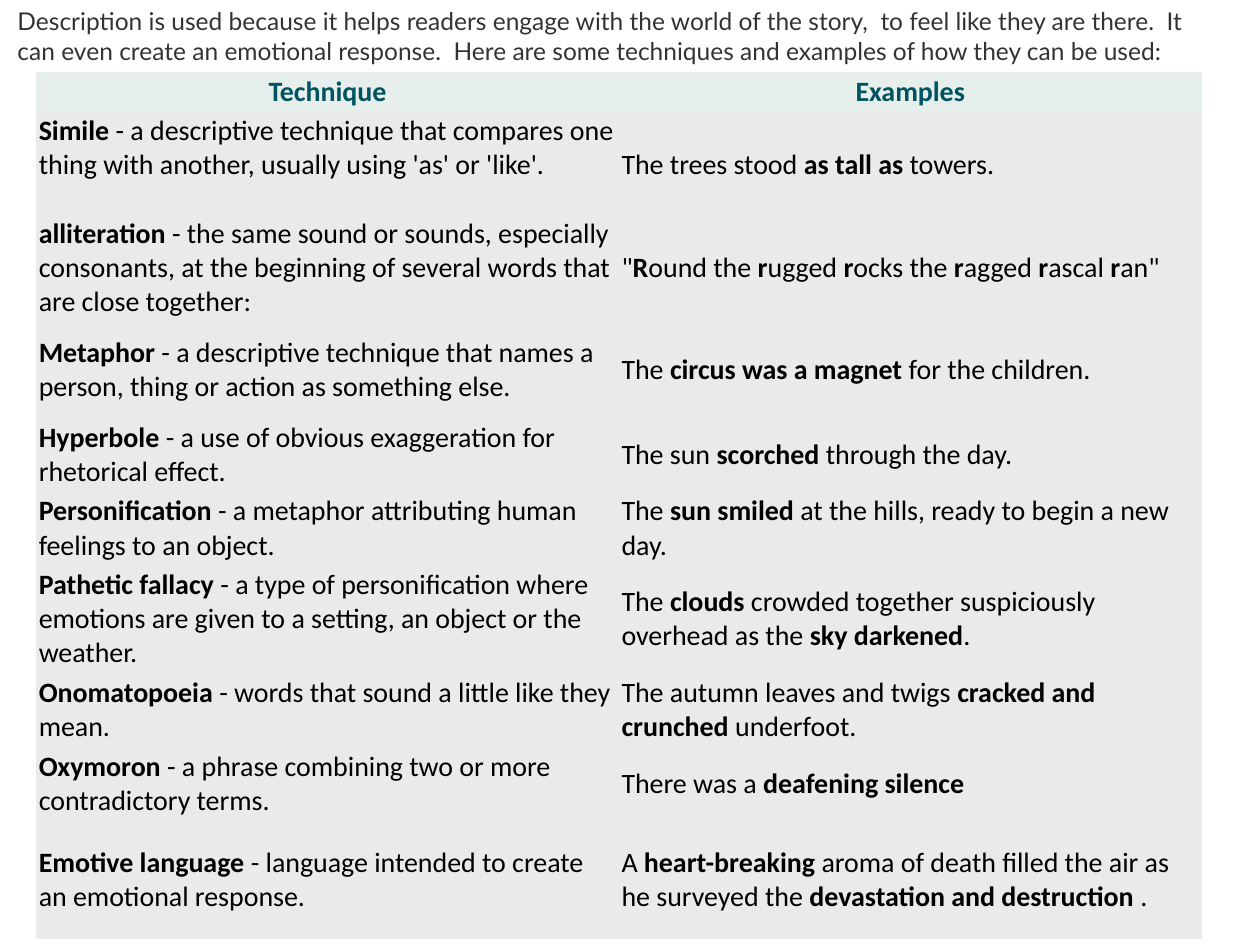
from pptx import Presentation
from pptx.dml.color import RGBColor
from pptx.enum.text import MSO_ANCHOR as Anchor, PP_ALIGN as Align
from pptx.util import Pt

COLORS = {"heading": "005361", "header": "E6EFEC", "body": "EAEAEA",
          "text": "000000", "intro": "333333"}
NO_STYLE_NO_GRID = "{2D5ABB26-0587-4C30-8999-92F81FD0307C}"

INTRO = ("Description is used because it helps readers engage with the world of the story,  "
         "to feel like they are there.  It can even create an emotional response.  "
         "Here are some techniques and examples of how they can be used:")

# Bold passages stand between asterisks; a line break starts a new paragraph.
ROWS = [
    ("*Technique*", "*Examples*"),
    ("*Simile* - a descriptive technique that compares one thing with another, "
     "usually using 'as' or 'like'.\n"
     "*alliteration* - the same sound or sounds, especially consonants, "
     "at the beginning of several words that are close together:",
     "The trees stood *as tall as* towers.\n"
     "\"*R*ound the *r*ugged *r*ocks the *r*agged *r*ascal *r*an\""),
    ("*Metaphor* - a descriptive technique that names a person, thing or action as something else.",
     "The *circus was a magnet* for the children."),
    ("*Hyperbole* - a use of obvious exaggeration for rhetorical effect.",
     "The sun *scorched* through the day."),
    ("*Personification* - a metaphor attributing human feelings to an object.",
     "The *sun smiled* at the hills, ready to begin a new day."),
    ("*Pathetic fallacy* - a type of personification where emotions are given to a setting, "
     "an object or the weather.",
     "The *clouds* crowded together suspiciously overhead as the *sky darkened*."),
    ("*Onomatopoeia* - words that sound a little like they mean.",
     "The autumn leaves and twigs *cracked and crunched *underfoot."),
    ("*Oxymoron* - a phrase combining two or more contradictory terms.",
     "There was a *deafening silence*"),
    ("*Emotive language* - language intended to create an emotional response.",
     "A *heart-breaking* aroma of death filled the air as he surveyed the "
     "*devastation and destruction* ."),
]
ROW_HEIGHTS = [21.6, 116, 55, 42, 42, 59, 42, 42, 68]
PARAGRAPH_GAPS = [19.5, 39]  # one and two empty lines


class Page:
    table_font, table_size = "Calibri", 16
    intro_font, intro_size = "Lato", 14
    margin = Pt(1.5)

    def __init__(self, deck):
        self.slide = deck.slides.add_slide(deck.slide_layouts[6])

    def style(self, span, font, size, color, bold=False):
        span.font.name, span.font.size, span.font.bold = font, Pt(size), bold
        span.font.color.rgb = RGBColor.from_string(COLORS[color])

    def text(self, words, left, top, width, height):
        box = self.slide.shapes.add_textbox(Pt(left), Pt(top), Pt(width), Pt(height))
        frame = box.text_frame
        frame.word_wrap, frame.vertical_anchor = True, Anchor.MIDDLE
        frame.text = words
        self.style(frame.paragraphs[0].runs[0], self.intro_font, self.intro_size, "intro")

    def cell(self, cell, marked, is_header, gap):
        cell.fill.solid()
        cell.fill.fore_color.rgb = RGBColor.from_string(COLORS["header" if is_header else "body"])
        cell.vertical_anchor = Anchor.MIDDLE
        cell.margin_left = cell.margin_right = self.margin
        cell.margin_top = cell.margin_bottom = self.margin
        cell.text_frame.text = marked
        for index, para in enumerate(cell.text_frame.paragraphs):
            parts = para.text.split("*")
            para.text = ""
            para.alignment = Align.CENTER if is_header else Align.LEFT
            para.space_before = Pt(gap if index else 0)
            for number, part in enumerate(parts):
                if part:
                    span = para.add_run()
                    span.text = part
                    self.style(span, self.table_font, self.table_size,
                               "heading" if is_header else "text", number % 2 == 1)

    def table(self, rows, left, top, width, heights):
        frame = self.slide.shapes.add_table(len(rows), len(rows[0]), Pt(left), Pt(top),
                                            Pt(width), Pt(sum(heights)))
        table = frame.table
        table.horz_banding = False
        for style_id in frame.element.xpath(".//a:tableStyleId"):
            style_id.text = NO_STYLE_NO_GRID
        for row, (texts, height) in enumerate(zip(rows, heights)):
            table.rows[row].height = Pt(height)
            for column, marked in enumerate(texts):
                self.cell(table.cell(row, column), marked, row == 0, PARAGRAPH_GAPS[column])


def main():
    deck = Presentation()
    deck.slide_width, deck.slide_height = Pt(720), Pt(540)
    page = Page(deck)
    page.table(ROWS, 20.7, 41, 666, ROW_HEIGHTS)
    page.text(INTRO, 2.9, 0, 702, 41)
    deck.save("out.pptx")


if __name__ == "__main__":
    main()
